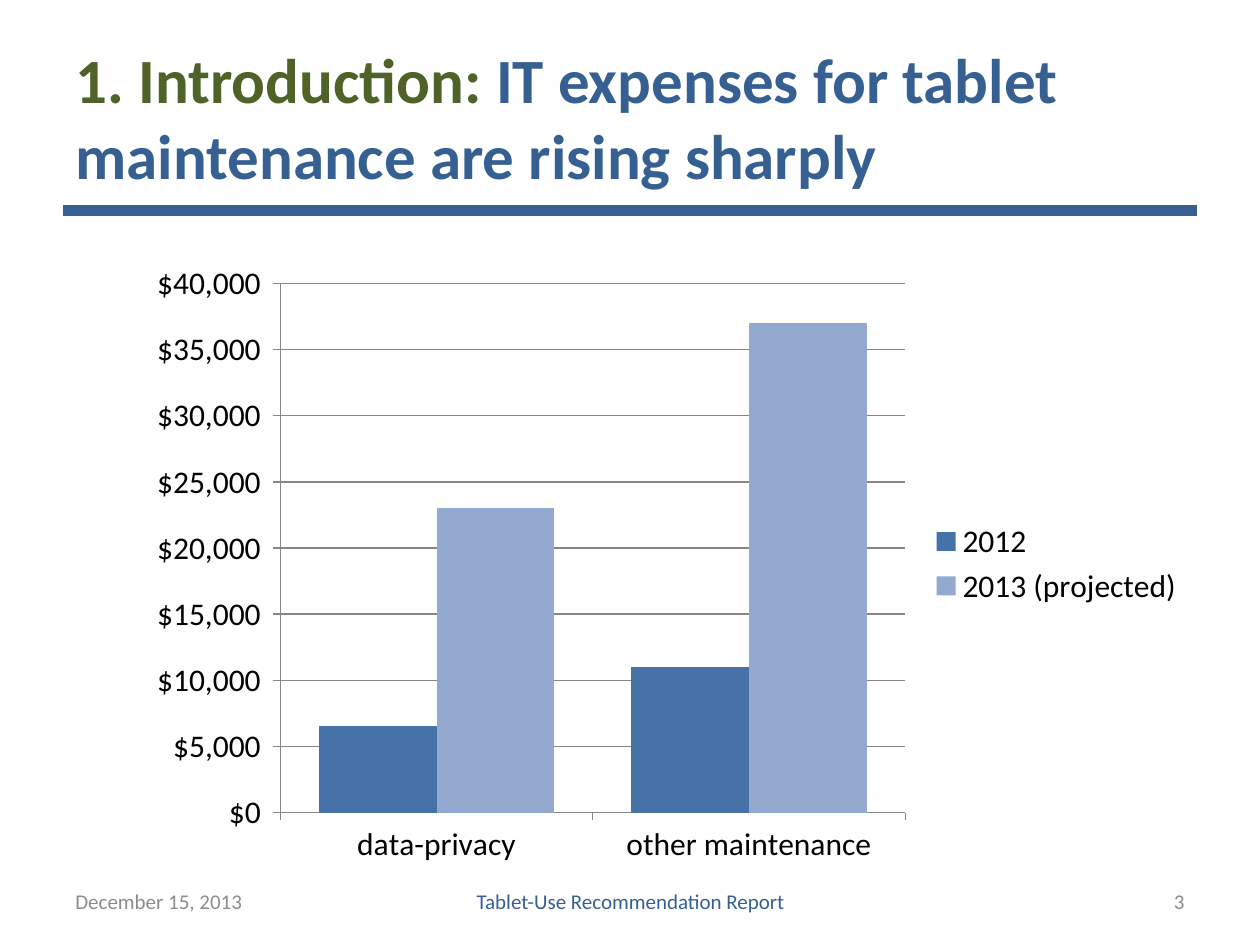
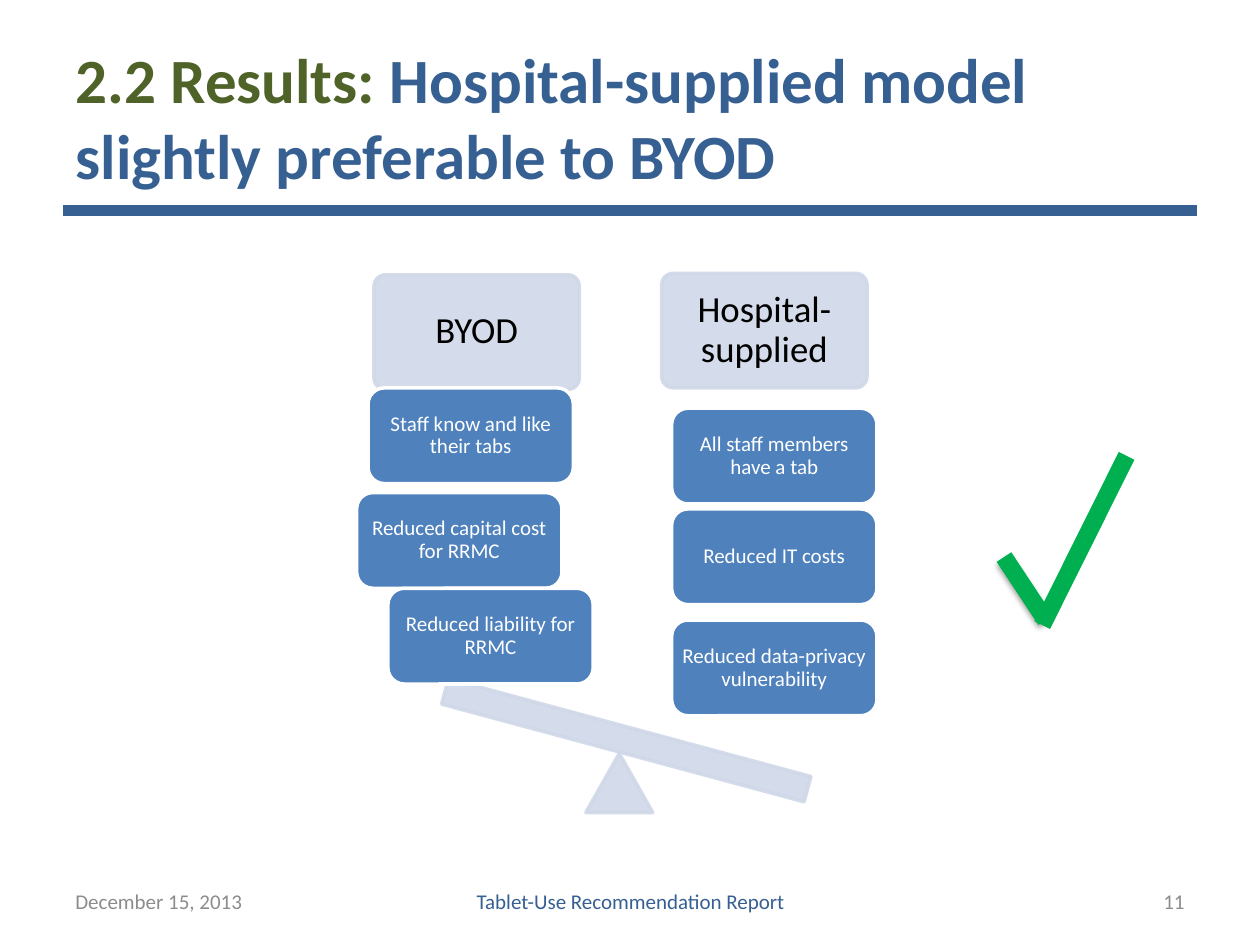
import pptx
import pptx.chart.data
import pptx.dml.color
import pptx.enum.chart
import pptx.enum.shapes
import pptx.enum.text
import pptx.oxml
import pptx.oxml.ns
import pptx.util
from pptx.util import Cm, Pt

COLORS = {
    "blue": "376092", "green": "4F6228", "grey": "8C8C8C",
    "black": "000000", "white": "FFFFFF", "check": "00B050",
    "pale": "D0D8E8", "box": "4F81BD", "grid": "868686",
    "bar_2012": "4672A8", "bar_2013": "93A9CF",
}
RGB = {name: pptx.dml.color.RGBColor.from_string(h) for name, h in COLORS.items()}
FONT = "Calibri"
ALIGN = pptx.enum.text.PP_ALIGN
MIDDLE = pptx.enum.text.MSO_ANCHOR.MIDDLE
SHAPE = pptx.enum.shapes.MSO_SHAPE
NS = pptx.oxml.ns.nsdecls("a")


def write(sp, runs, size, align, bold=False):
    """Fill a shape with one paragraph of (text, colour) runs."""
    tf = sp.text_frame
    tf.word_wrap = True
    tf.vertical_anchor = MIDDLE
    p = tf.paragraphs[0]
    p.alignment = align
    for text, color in runs:
        r = p.add_run()
        r.text = text
        r.font.name = FONT
        r.font.size = Pt(size)
        r.font.bold = bold
        r.font.color.rgb = RGB[color]
    return p


def add_line(s, x1, y1, x2, y2, color, width, effect=""):
    """Draw a straight line with no shadow unless an effect is given."""
    ln = s.shapes.add_connector(pptx.enum.shapes.MSO_CONNECTOR.STRAIGHT,
                                Cm(x1), Cm(y1), Cm(x2), Cm(y2))
    ln.line.color.rgb = RGB[color]
    ln.line.width = Pt(width)
    ln._element.spPr.append(
        pptx.oxml.parse_xml(f"<a:effectLst {NS}>{effect}</a:effectLst>"))


prs = pptx.Presentation()
prs.slide_width, prs.slide_height = Cm(25.4), Cm(19.05)

# Title, rule and footer on every slide
pages = [
    ("1. Introduction: ", "IT expenses for tablet maintenance are rising sharply", "3"),
    ("2.2 Results: ", "Hospital-supplied model slightly preferable to BYOD", "11"),
]
for section, claim, number in pages:
    s = prs.slides.add_slide(prs.slide_layouts[5])
    add_line(s, 1.27, 4.24, 24.13, 4.24, "blue", 6)
    title = s.shapes.title
    title.left, title.top, title.width, title.height = Cm(1.27), Cm(0.76), Cm(22.86), Cm(3.18)
    write(title, [(section, "green"), (claim, "blue")], 36, ALIGN.LEFT, bold=True)
    title.text_frame.auto_size = pptx.enum.text.MSO_AUTO_SIZE.NONE
    for text, left, width, color, align in [
        ("December 15, 2013", 1.27, 5.92, "grey", ALIGN.LEFT),
        ("Tablet-Use Recommendation Report", 8.69, 8.05, "blue", ALIGN.CENTER),
        (number, 18.21, 5.92, "grey", ALIGN.RIGHT),
    ]:
        sp = s.shapes.add_textbox(Cm(left), Cm(17.65), Cm(width), Cm(1.02))
        write(sp, [(text, color)], 12, align)

expenses, results = prs.slides

# Expense chart
data = pptx.chart.data.CategoryChartData()
data.categories = ["data-privacy", "other maintenance"]
data.add_series("2012", (6500, 11000))
data.add_series("2013 (projected)", (23000, 37000))
chart = expenses.shapes.add_chart(
    pptx.enum.chart.XL_CHART_TYPE.COLUMN_CLUSTERED,
    Cm(2.74), Cm(5.08), Cm(21.39), Cm(12.57), data).chart
chart.has_title = False
chart.font.name = FONT
chart.font.size = Pt(18)
chart.font.color.rgb = RGB["black"]
chart.has_legend = True
chart.legend.position = pptx.enum.chart.XL_LEGEND_POSITION.RIGHT
chart.legend.include_in_layout = False

plot = chart.plots[0]
plot.gap_width = 65
plot.overlap = 0
plot.vary_by_categories = False
for series, color in zip(plot.series, ("bar_2012", "bar_2013")):
    series.format.fill.solid()
    series.format.fill.fore_color.rgb = RGB[color]

values = chart.value_axis
values.minimum_scale, values.maximum_scale, values.major_unit = 0, 40000, 5000
values.has_major_gridlines = True
values.tick_labels.number_format = r'"$"#,##0_);[Red]\("$"#,##0\)'
values.tick_labels.number_format_is_linked = False
for axis in (values, chart.category_axis):
    axis.major_tick_mark = pptx.enum.chart.XL_TICK_MARK.OUTSIDE
for part in (values, values.major_gridlines, chart.category_axis):
    part.format.line.color.rgb = RGB["grid"]
    part.format.line.width = Pt(0.75)

# Scale: headings, pivot, tilted beam, then the arguments stacked on it
headings = [("BYOD", 7.54, 5.54), ("Hospital-supplied", 13.34, 5.51)]
arguments = [
    ("Reduced data-privacy vulnerability", 13.54, 12.5),
    ("Reduced IT costs", 13.54, 10.26),
    ("All staff members have a tab", 13.54, 8.23),
    ("Reduced capital cost for RRMC", 7.19, 9.93),
    ("Staff know and like their tabs", 7.42, 7.82),
    ("Reduced liability for RRMC", 7.82, 11.86),
]
parts = [(SHAPE.ROUNDED_RECTANGLE, x, y, 4.14, 2.31, "pale", text) for text, x, y in headings]
parts += [
    (SHAPE.ISOSCELES_TRIANGLE, 11.81, 15.19, 1.35, 1.19, "pale", ""),
    (SHAPE.RECTANGLE, 8.84, 14.66, 7.57, 0.53, "pale", ""),
]
parts += [(SHAPE.ROUNDED_RECTANGLE, x, y, 4.14, 1.93, "box", text) for text, x, y in arguments]

for kind, x, y, w, h, color, text in parts:
    pale = color == "pale"
    sp = results.shapes.add_shape(kind, Cm(x), Cm(y), Cm(w), Cm(h))
    sp.shadow.inherit = False
    sp.fill.solid()
    sp.fill.fore_color.rgb = RGB[color]
    sp.line.color.rgb = RGB["pale" if pale else "white"]
    sp.line.width = Pt(2)
    if pale:
        for clr in sp._element.spPr.iter(pptx.oxml.ns.qn("a:srgbClr")):
            clr.append(pptx.oxml.parse_xml(f'<a:alpha {NS} val="90000"/>'))
    if kind == SHAPE.RECTANGLE:
        sp.rotation = 15.1
    if text:
        sp.adjustments[0] = 0.1 if pale else 0.17
        tf = sp.text_frame
        tf.margin_left = tf.margin_right = tf.margin_top = tf.margin_bottom = Cm(0.23 if pale else 0.12)
        p = write(sp, [(text, "black" if pale else "white")], 21 if pale else 12, ALIGN.CENTER)
        p.line_spacing = 0.9

# Check mark beside the preferred model
shadow = ('<a:outerShdw blurRad="39370" dist="22860" dir="5400000" rotWithShape="0">'
          '<a:srgbClr val="000000"><a:alpha val="35000"/></a:srgbClr></a:outerShdw>')
add_line(results, 20.24, 11.23, 21.08, 12.5, "check", 10, shadow)
add_line(results, 21.01, 12.6, 22.71, 9.19, "check", 10)

prs.save("out.pptx")
